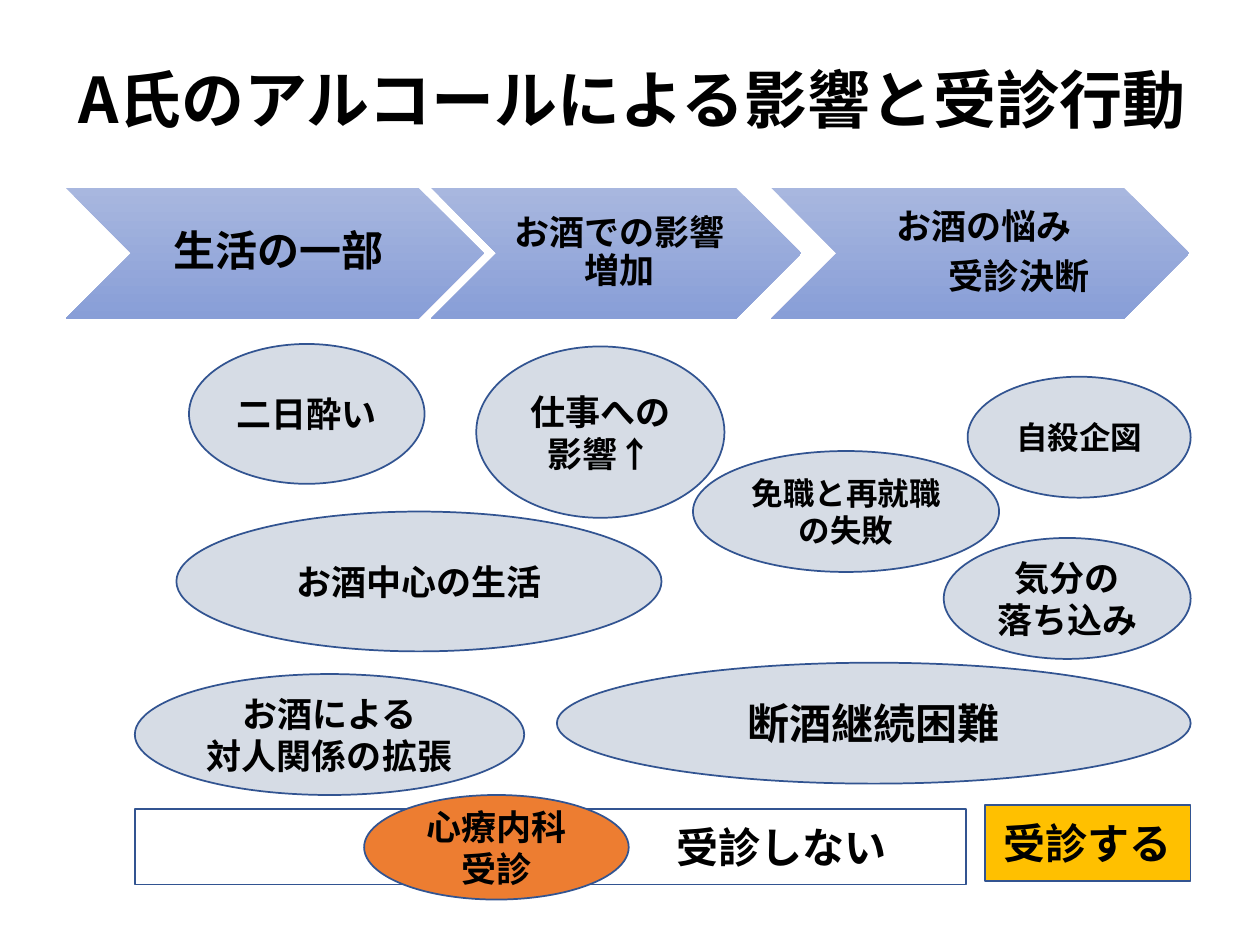
from pptx import Presentation
from pptx.dml.color import RGBColor
from pptx.enum.shapes import MSO_SHAPE
from pptx.enum.text import MSO_ANCHOR, MSO_AUTO_SIZE, PP_ALIGN
from pptx.oxml.ns import qn
from pptx.util import Inches, Pt

CHEVRON, OVAL, RECT = MSO_SHAPE.CHEVRON, MSO_SHAPE.OVAL, MSO_SHAPE.RECTANGLE
MIDDLE, CENTER, LEFT = MSO_ANCHOR.MIDDLE, PP_ALIGN.CENTER, PP_ALIGN.LEFT
FONT = "Noto Sans CJK JP"
COLORS = {
    "text": "000000", "line": "325491", "pale": "D6DCE5", "white": "FFFFFF",
    "gold": "FFC000", "orange": "ED7D31", "top": "A8B7DF", "bottom": "889ED7",
}
COLS, ROWS = 100, 75
WIDTH, HEIGHT = Inches(10), Inches(7.5)
EDGE = 94.5  # right edge shared by the shapes, in columns
STEP_TOP, STEP_TALL = 14.9, 10.4

# left, width, size, text
STEPS = [
    (5.2, 33.2, 24, "生活の一部"),
    (34.2, 29.4, 20, "お酒での影響増加"),
    (61.2, 33.2, 20, "お酒の悩み\n受診決断"),
]
# left, top, width, height, size, text
EVENTS = [
    (15, 27.3, 18.7, 11.1, 20, "二日酔い"),
    (EDGE - 19.6, 42.7, 19.6, 9.6, 20, "気分の\n落ち込み"),
    (EDGE - 17.7, 29.9, 17.7, 9.6, 18, "自殺企図"),
    (14, 40.6, 38.5, 11.1, 20, "お酒中心の生活"),
    (37.8, 27.5, 19.7, 13.6, 20, "仕事への影響↑"),
    (EDGE - 50.3, 52.6, 50.3, 9.6, 24, "断酒継続困難"),
    (55, 35.8, 24.3, 9.6, 18, "免職と再就職の失敗"),
    (10.7, 53.5, 30.9, 9.6, 20, "お酒による\n対人関係の拡張"),
]


def color(name):
    return RGBColor.from_string(COLORS[name])


def grid(left, top, width, height):
    """Turn columns and rows into slide lengths."""
    return (int(WIDTH * left / COLS), int(HEIGHT * top / ROWS),
            int(WIDTH * width / COLS), int(HEIGHT * height / ROWS))


def write(shape, text, size, align=CENTER):
    frame = shape.text_frame
    frame.text = text
    frame.word_wrap = True
    frame.vertical_anchor = MIDDLE
    for para in frame.paragraphs:
        para.alignment = align
        for run in para.runs:
            font = run.font
            font.name, font.size, font.bold = FONT, Pt(size), True
            font.color.rgb = color("text")
            east = font._element.makeelement(qn("a:ea"), {"typeface": FONT})
            font._element.find(qn("a:latin")).addnext(east)


def add_title(slide, text):
    title = slide.shapes.title
    title.left, title.top, title.width, title.height = grid(5.2, 2, 90.9, 12.3)
    write(title, text, 36, LEFT)
    title.text_frame.auto_size = MSO_AUTO_SIZE.NONE
    title.text_frame.paragraphs[0].line_spacing = 0.9


def add_step(slide, left, width, size, text):
    step = slide.shapes.add_shape(CHEVRON, *grid(left, STEP_TOP, width, STEP_TALL))
    step.shadow.inherit = False
    step.line.fill.background()
    step.fill.gradient()
    step.fill.gradient_angle = 270
    for stop, name in zip(step.fill.gradient_stops, ("top", "bottom")):
        stop.color.rgb = color(name)
    write(step, text, size)
    frame = step.text_frame
    frame.margin_left = Inches(0.09)
    frame.margin_right = frame.margin_top = frame.margin_bottom = Inches(0.03)
    for para in frame.paragraphs:
        para.line_spacing = 0.9
        para.space_after = Pt(0.35 * size)
    return step


def add_node(slide, kind, box, size, text, fill="pale"):
    node = slide.shapes.add_shape(kind, *grid(*box))
    node.shadow.inherit = False
    node.fill.solid()
    node.fill.fore_color.rgb = color(fill)
    node.line.color.rgb = color("line")
    node.line.width = Pt(1)
    write(node, text, size)
    return node


def main():
    deck = Presentation()
    deck.slide_width, deck.slide_height = WIDTH, HEIGHT
    slide = deck.slides.add_slide(deck.slide_layouts[5])
    add_title(slide, "A氏のアルコールによる影響と受診行動")

    steps = [add_step(slide, *step) for step in STEPS]
    choice = steps[-1].text_frame.paragraphs[-1]
    choice._p.get_or_add_pPr().set("marL", str(Pt(40)))

    for *box, size, text in EVENTS:
        add_node(slide, OVAL, box, size, text)

    avoid = add_node(slide, RECT, (10.7, 64.2, 66, 6), 24, "受診しない", "white")
    avoid.text_frame.margin_left = Inches(3.77)
    add_node(slide, RECT, (EDGE - 16.3, 63.9, 16.3, 6), 24, "受診する", "gold")
    add_node(slide, OVAL, (28.9, 63.1, 21, 8.3), 20, "心療内科受診", "orange")
    deck.save("out.pptx")


if __name__ == "__main__":
    main()
